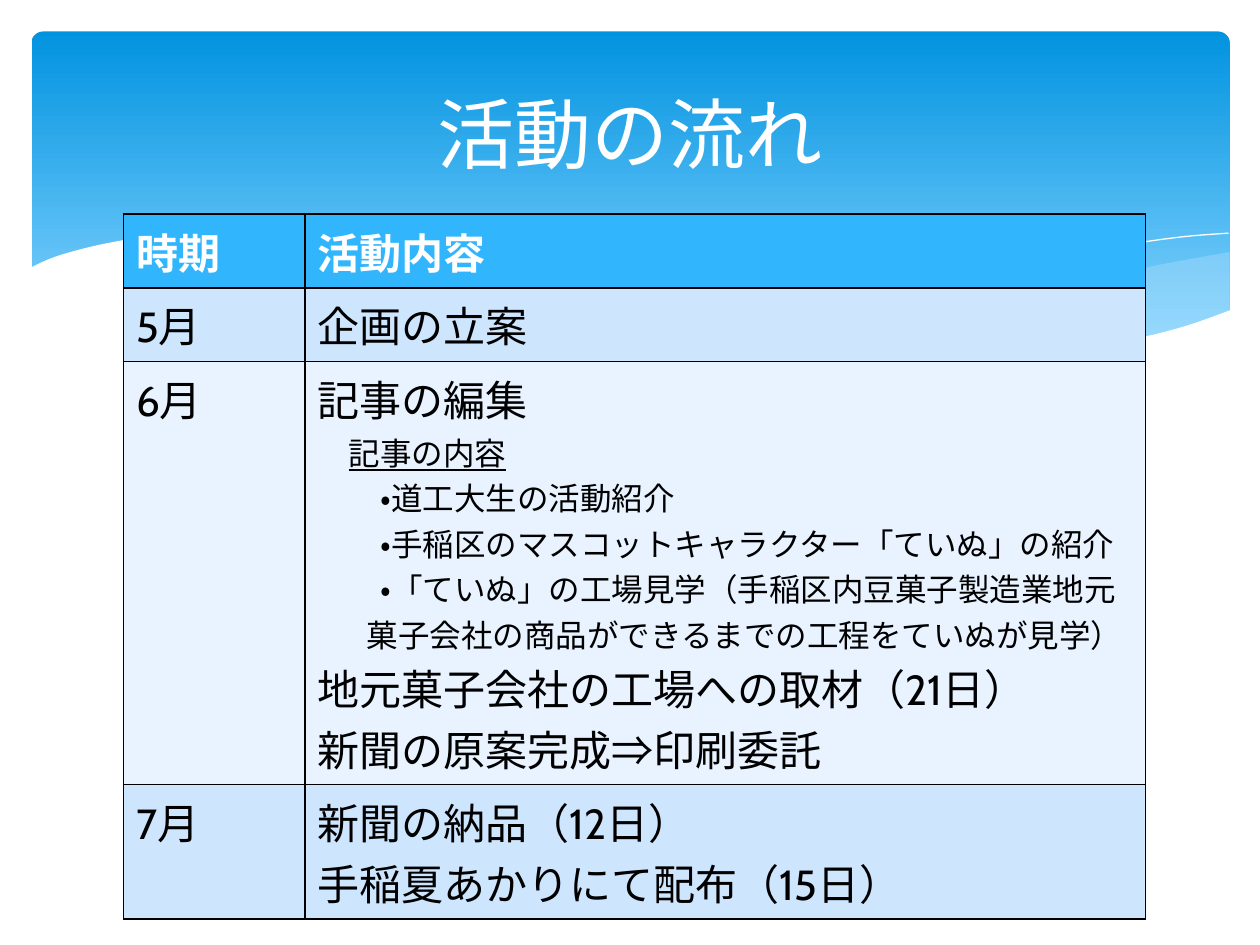
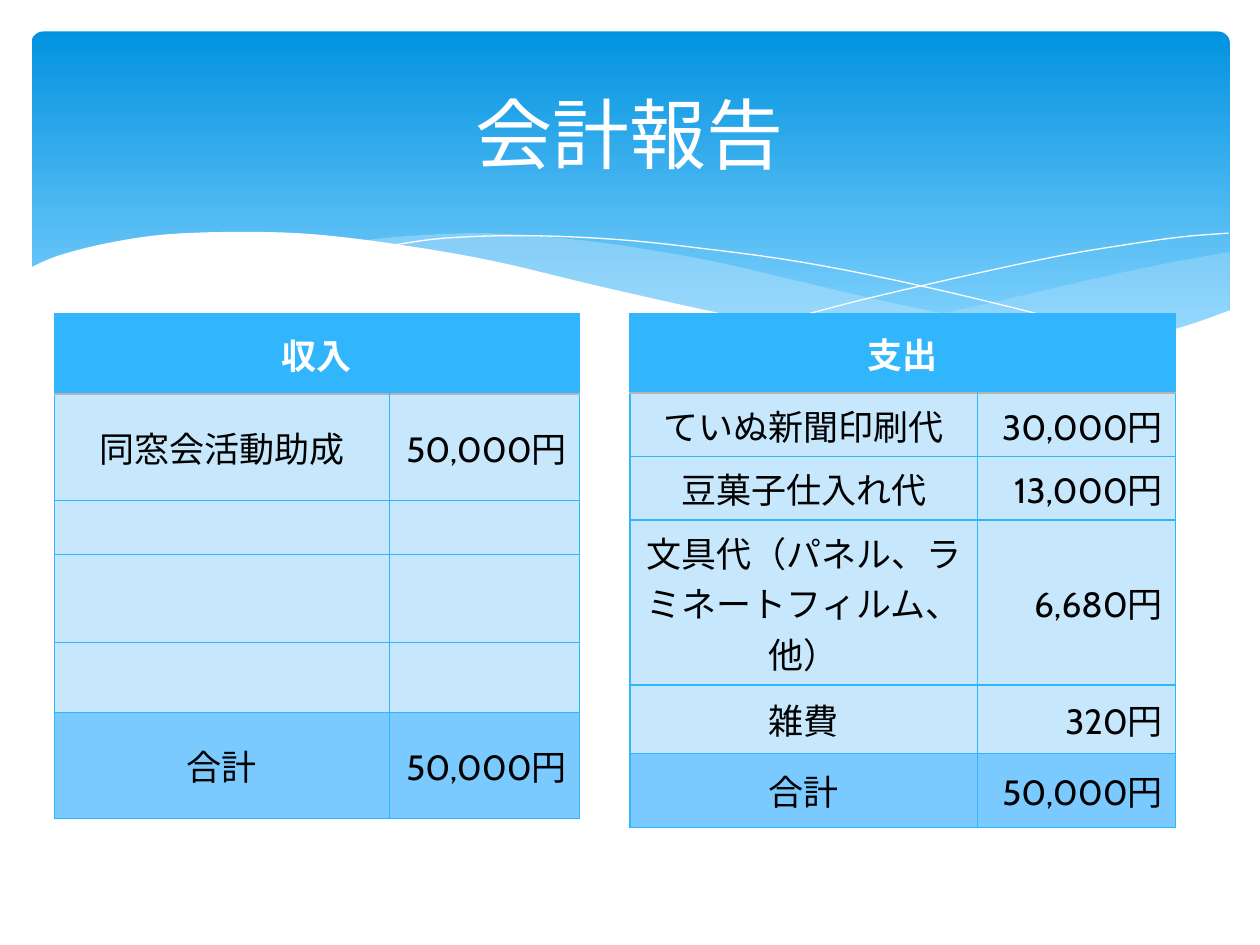
from dataclasses import dataclass
from typing import NamedTuple, Optional

from lxml.etree import SubElement
from pptx import Presentation
from pptx.dml.color import RGBColor
from pptx.enum.lang import MSO_LANGUAGE_ID as Lang
from pptx.enum.shapes import MSO_SHAPE as Preset
from pptx.enum.text import MSO_ANCHOR as Anchor, PP_ALIGN as Align
from pptx.oxml import parse_xml
from pptx.oxml.ns import nsdecls, qn
from pptx.util import Inches, Pt

WIDTH, HEIGHT = Inches(10), Inches(7.5)
GRID_COLUMNS, GRID_ROWS = 10, 7.5
FONT = "Cabin"
COLORS = {
    "white": "FFFFFF",
    "black": "000000",
    "band_top": "0293E0",
    "band_bottom": "83D3FE",
    "mist": "C6E7FC",
    "header": "31B6FD",
    "header_rule": "B4B4B4",
    "total": "7ACAFF",
    "month_dark": "CEE5FE",
    "month_light": "E8F3FF",
}
Point = tuple[float, float]


class Box(NamedTuple):
    """Left, top, width and height in grid columns and rows."""
    left: float
    top: float
    width: float
    height: float

    def place(self) -> tuple[int, int, int, int]:
        return across(self.left), down(self.top), across(self.width), down(self.height)


class Wave(NamedTuple):
    """Smooth curves run one after another; with a fill they close into an area."""
    curves: list[list[Point]]
    fill: Optional[str] = None
    opacity: int = 100
    corners: tuple[Point, ...] = ()


class Line(NamedTuple):
    text: str
    size: float = 24
    underline: bool = False
    margin: float = 0
    indent: float = 0


class Border(NamedTuple):
    color: str
    points: float


@dataclass
class CellStyle:
    fill: str
    color: str = "black"
    bold: bool = False
    align: Align = Align.LEFT
    anchor: Anchor = Anchor.TOP


@dataclass
class Account:
    heading: str
    box: Box
    columns: list[float]
    rows: list[float]
    entries: list[tuple[str, str]]


TITLE_BOX = Box(0.5, 0.37, 9, 1.37)
BAND_BOX = Box(0.25, 0.25, 9.51, 2.7)

WAVES = [
    Wave([[(9.76, 2), (9.21, 2.1), (8.61, 2.23), (7.79, 2.42), (7.06, 2.57), (6.61, 2.65)],
          [(6.61, 2.65), (7.19, 2.72), (7.69, 2.77), (8.24, 2.77), (8.81, 2.73),
           (9.28, 2.63), (9.76, 2.47)]], "mist", 29),
    Wave([[(8.93, 2.73), (8.37, 2.65), (7.75, 2.54), (7.06, 2.4), (6.29, 2.22), (5.69, 2.08),
           (5.14, 1.98), (4.65, 1.91), (4.2, 1.87), (3.8, 1.85), (3.28, 1.87), (2.86, 1.91)],
          [(2.86, 1.91), (3.42, 1.99), (4.04, 2.11), (4.91, 2.32), (5.66, 2.48), (6.34, 2.61),
           (6.95, 2.7), (7.48, 2.76), (8.07, 2.78), (8.57, 2.77), (8.93, 2.73)]], "mist", 40),
    Wave([[(3.09, 1.95), (3.53, 1.89), (4.16, 1.87), (4.89, 1.9), (5.56, 1.97), (6.36, 2.08),
           (7.27, 2.26), (8.31, 2.51), (9.07, 2.72)]]),
    Wave([[(6.13, 2.57), (6.72, 2.41), (7.48, 2.23), (8.36, 2.04), (8.95, 1.94),
           (9.38, 1.88), (9.75, 1.85)]]),
    Wave([[(9.77, 2.46), (9.4, 2.59), (8.99, 2.69), (8.5, 2.75), (8.09, 2.77), (7.44, 2.74),
           (6.68, 2.65), (5.79, 2.5), (4.75, 2.27), (3.91, 2.07), (3.16, 1.94), (2.5, 1.86),
           (1.93, 1.84), (1.32, 1.86), (0.85, 1.93), (0.46, 2.03), (0.23, 2.13)]],
         "white", corners=((0.23, 3.29), (9.77, 3.29))),
]


def article(text: str) -> Line:
    return Line(text, 18, margin=0.39, indent=0.11)


SCHEDULE_BOX = Box(0.98, 1.7, 8.11, 3.93)
SCHEDULE_COLUMNS = [1.44, 6.67]
SCHEDULE_ROWS = [0.41, 0.41, 2.7, 0.41]
SCHEDULE = [
    ("時期", [Line("活動内容")]),
    ("5月", [Line("企画の立案")]),
    ("6月", [
        Line("記事の編集"),
        Line("記事の内容", 18, underline=True, margin=0.25),
        article("・道工大生の活動紹介"),
        article("・手稲区のマスコットキャラクター「ていぬ」の紹介"),
        article("・「ていぬ」の工場見学（手稲区内豆菓子製造業"
                "地元菓子会社の商品ができるまでの工程をていぬが見学）"),
        Line("地元菓子会社の工場への取材（21日）"),
        Line("新聞の原案完成⇒印刷委託"),
    ]),
    ("7月", [Line("新聞の納品（12日）"), Line("手稲夏あかりにて配布（15日）")]),
]

ACCOUNTS = [
    Account("支出", Box(5, 2.49, 4.33, 3.04), [2.76, 1.57],
            [0.63, 0.42, 0.43, 0.43, 0.54, 0.59],
            [("ていぬ新聞印刷代", "30,000円"), ("豆菓子仕入れ代", "13,000円"),
             ("文具代（パネル、ラミネートフィルム、他）", "6,680円"),
             ("雑費", "320円"), ("合計", "50,000円")]),
    Account("収入", Box(0.43, 2.49, 4.17, 3.29), [2.66, 1.51],
            [0.64, 0.43, 0.43, 0.7, 0.55, 0.54],
            [("同窓会活動助成", "50,000円"), ("", ""), ("", ""), ("", ""),
             ("合計", "50,000円")]),
]


def across(columns: float) -> int:
    return round(WIDTH * columns / GRID_COLUMNS)


def down(rows: float) -> int:
    return round(HEIGHT * rows / GRID_ROWS)


def rgb(name: str) -> RGBColor:
    return RGBColor.from_string(COLORS[name])


def smooth(knots: list[Point], steps: int = 5) -> list[Point]:
    """Sample a Catmull-Rom curve through the knots."""
    padded = [knots[0], *knots, knots[-1]]
    curve = [knots[0]]
    for a, b, c, d in zip(padded, padded[1:], padded[2:], padded[3:]):
        for step in range(1, steps + 1):
            t = step / steps
            curve.append(tuple(
                (2 * q + (r - p) * t + (2 * p - 5 * q + 4 * r - s) * t ** 2
                 + (3 * q - p - 3 * r + s) * t ** 3) / 2
                for p, q, r, s in zip(a, b, c, d)))
    return curve


def draw_band(slide):
    band = slide.shapes.add_shape(Preset.ROUNDED_RECTANGLE, *BAND_BOX.place())
    band.adjustments[0] = 0.034
    band.shadow.inherit = False
    band.line.fill.background()
    band.fill.gradient()
    band.fill.gradient_angle = 270
    stops = zip(band.fill.gradient_stops, (0, 0.9), ("band_top", "band_bottom"))
    for stop, position, color in stops:
        stop.position = position
        stop.color.rgb = rgb(color)
    return band


def draw_wave(slide, wave: Wave):
    outline = [point for curve in wave.curves for point in smooth(curve)]
    outline += wave.corners
    start, *rest = [(across(x), down(y)) for x, y in outline]
    builder = slide.shapes.build_freeform(*start, scale=1.0)
    builder.add_line_segments(rest, close=wave.fill is not None)
    shape = builder.convert_to_shape()
    shape.shadow.inherit = False
    if wave.fill:
        shape.line.fill.background()
        shape.fill.solid()
        shape.fill.fore_color.rgb = rgb(wave.fill)
        if wave.opacity < 100:
            color = shape._element.spPr.find(".//" + qn("a:srgbClr"))
            SubElement(color, qn("a:alpha"), val=str(wave.opacity * 1000))
    else:
        shape.fill.background()
        shape.line.color.rgb = rgb("white")
        shape.line.width = Pt(0)
    return shape


def share_backdrop(slide, layout) -> None:
    """Draw the band and waves once and move them behind the layout's placeholders."""
    backdrop = [draw_band(slide), *(draw_wave(slide, wave) for wave in WAVES)]
    for depth, shape in enumerate(backdrop, start=2):
        layout.shapes._spTree.insert(depth, shape._element)


def move(shape, box: Box) -> None:
    shape.left, shape.top, shape.width, shape.height = box.place()


def add_run(paragraph, text: str, size: float, color: str,
            bold: bool = False, underline: bool = False) -> None:
    run = paragraph.add_run()
    run.text = text
    font = run.font
    font.name, font.size, font.bold = FONT, Pt(size), bold
    font.underline = underline
    font.color.rgb = rgb(color)
    font.language_id = Lang.JAPANESE


def write_title(slide, text: str) -> None:
    title = slide.shapes.title
    move(title, TITLE_BOX)
    title.text_frame.vertical_anchor = Anchor.MIDDLE
    heading = title.text_frame.paragraphs[0]
    heading.alignment = Align.CENTER
    add_run(heading, text, 44, "white")


def write_cell(cell, lines: list[Line], style: CellStyle) -> None:
    cell.fill.solid()
    cell.fill.fore_color.rgb = rgb(style.fill)
    cell.vertical_anchor = style.anchor
    for number, line in enumerate(lines):
        frame = cell.text_frame
        paragraph = frame.add_paragraph() if number else frame.paragraphs[0]
        paragraph.alignment = style.align
        if line.margin:
            properties = paragraph._p.get_or_add_pPr()
            properties.set("marL", str(Inches(line.margin)))
            properties.set("indent", str(Inches(line.indent)))
        if line.text:
            add_run(paragraph, line.text, line.size, style.color, style.bold, line.underline)


def draw_borders(table, border: Border, header_rule: Border) -> None:
    last = len(table.rows) - 1
    for number, row in enumerate(table.rows):
        sides = {"L": border, "R": border,
                 "T": header_rule if number == 1 else border,
                 "B": header_rule if number == 0 and last else border}
        for cell in row.cells:
            properties = cell._tc.get_or_add_tcPr()
            for position, (side, edge) in enumerate(sides.items()):
                properties.insert(position, parse_xml(
                    f'<a:ln{side} {nsdecls("a")} w="{Pt(edge.points)}"><a:solidFill>'
                    f'<a:srgbClr val="{COLORS[edge.color]}"/></a:solidFill></a:ln{side}>'))


def add_grid(slide, box: Box, columns: list[float], rows: list[float]):
    table = slide.shapes.add_table(len(rows), len(columns), *box.place()).table
    table.horz_banding = False
    for column, width in zip(table.columns, columns):
        column.width = across(width)
    for row, height in zip(table.rows, rows):
        row.height = down(height)
    return table


def add_schedule(slide) -> None:
    table = add_grid(slide, SCHEDULE_BOX, SCHEDULE_COLUMNS, SCHEDULE_ROWS)
    for number, (month, activities) in enumerate(SCHEDULE):
        if number == 0:
            style = CellStyle("header", "white", bold=True)
        else:
            style = CellStyle("month_dark" if number % 2 else "month_light")
        write_cell(table.cell(number, 0), [Line(month)], style)
        write_cell(table.cell(number, 1), activities, style)
    rule = Border("black", 1)
    draw_borders(table, rule, rule)


def add_account(slide, account: Account) -> None:
    table = add_grid(slide, account.box, account.columns, account.rows)
    table.cell(0, 0).merge(table.cell(0, 1))
    write_cell(table.cell(0, 0), [Line(account.heading, 20)],
               CellStyle("header", "white", True, Align.CENTER, Anchor.MIDDLE))
    for number, entry in enumerate(account.entries, start=1):
        fill = "total" if number == len(account.entries) else "mist"
        for column, align in enumerate((Align.CENTER, Align.RIGHT)):
            write_cell(table.cell(number, column), [Line(entry[column], 20)],
                       CellStyle(fill, align=align, anchor=Anchor.MIDDLE))
    draw_borders(table, Border("header", 0.75), Border("header_rule", 1.25))


def main() -> None:
    deck = Presentation()
    deck.slide_width, deck.slide_height = WIDTH, HEIGHT
    title_only = deck.slide_layouts[5]

    flow = deck.slides.add_slide(title_only)
    share_backdrop(flow, title_only)
    write_title(flow, "活動の流れ")
    add_schedule(flow)

    report = deck.slides.add_slide(title_only)
    write_title(report, "会計報告")
    for account in ACCOUNTS:
        add_account(report, account)

    deck.save("out.pptx")


if __name__ == "__main__":
    main()
